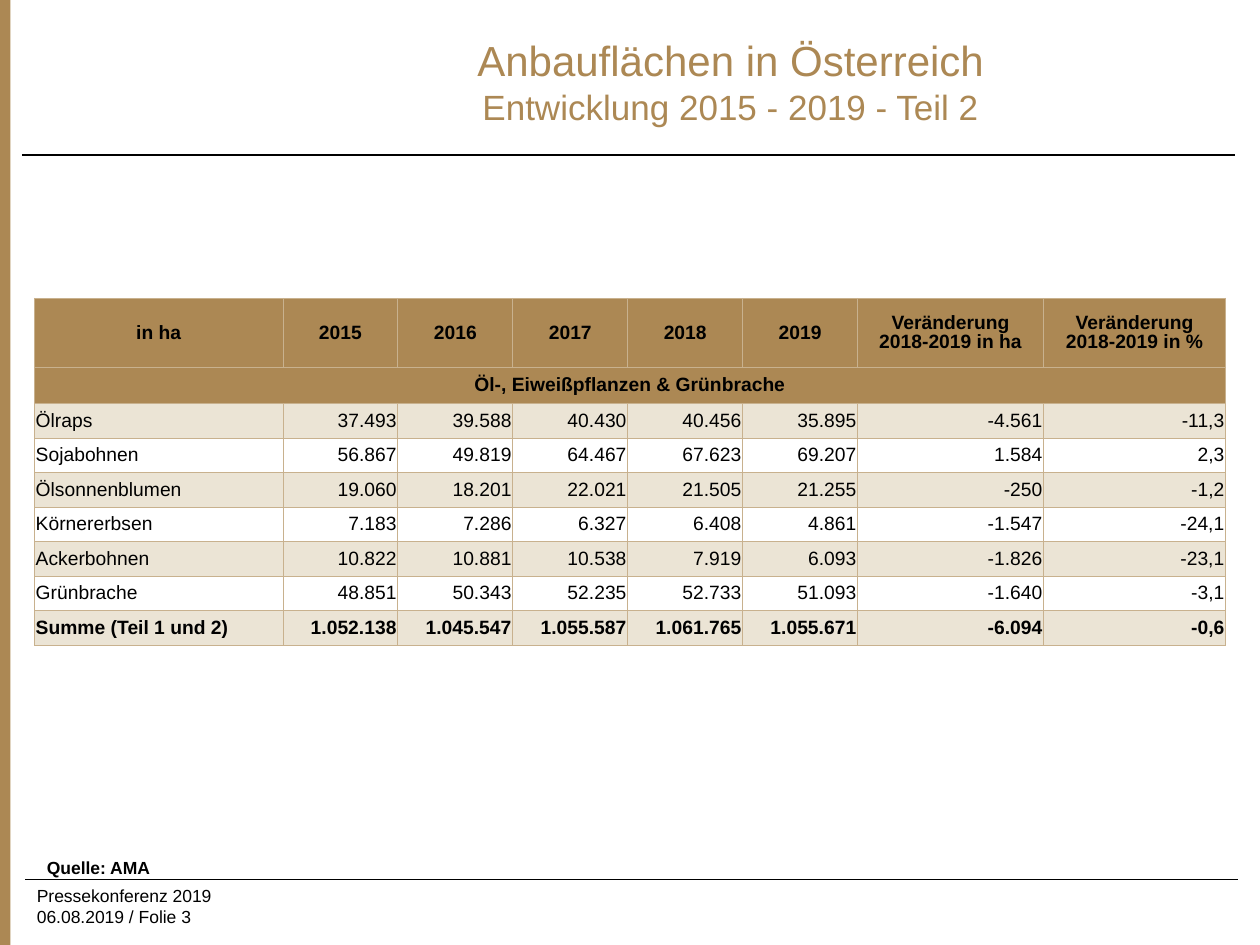
from typing import NamedTuple

from lxml import etree
from pptx import Presentation
from pptx.dml.color import RGBColor
from pptx.enum.shapes import MSO_CONNECTOR, MSO_SHAPE
from pptx.enum.text import MSO_ANCHOR, PP_ALIGN
from pptx.oxml.ns import qn
from pptx.util import Pt

RECT = MSO_SHAPE.RECTANGLE
STRAIGHT = MSO_CONNECTOR.STRAIGHT
MIDDLE = MSO_ANCHOR.MIDDLE
LEFT, CENTER, RIGHT = PP_ALIGN.LEFT, PP_ALIGN.CENTER, PP_ALIGN.RIGHT

FONT = "Arial"
COLORS = {"gold": "AC8854", "sand": "EBE4D5", "grid": "C8B18E", "ink": "000000"}


class Box(NamedTuple):
    left: float
    top: float
    width: float
    height: float


class Rule(NamedTuple):
    left: float
    right: float
    top: float


class Crop(NamedTuple):
    name: str
    areas: list[str]
    change: str
    percent: str
    bold: bool = False


RULES = [Rule(12.5, 705.5, 88.6), Rule(14.3, 707.5, 502.6)]
TABLE = Box(19.7, 170.4, 680.8, 198.5)
WIDTHS = [142] + [65.7] * 5 + [106.3, 104]
HEAD = ["in ha", *map(str, range(2015, 2020)),
        "Veränderung\n2018-2019 in ha", "Veränderung\n2018-2019 in %"]
GROUP = "Öl-, Eiweißpflanzen & Grünbrache"
CROPS = [
    Crop("Ölraps", ["37.493", "39.588", "40.430", "40.456", "35.895"], "-4.561", "-11,3"),
    Crop("Sojabohnen", ["56.867", "49.819", "64.467", "67.623", "69.207"], "1.584", "2,3"),
    Crop("Ölsonnenblumen", ["19.060", "18.201", "22.021", "21.505", "21.255"], "-250", "-1,2"),
    Crop("Körnererbsen", ["7.183", "7.286", "6.327", "6.408", "4.861"], "-1.547", "-24,1"),
    Crop("Ackerbohnen", ["10.822", "10.881", "10.538", "7.919", "6.093"], "-1.826", "-23,1"),
    Crop("Grünbrache", ["48.851", "50.343", "52.235", "52.733", "51.093"], "-1.640", "-3,1"),
    Crop("Summe (Teil 1 und 2)",
         ["1.052.138", "1.045.547", "1.055.587", "1.061.765", "1.055.671"],
         "-6.094", "-0,6", True),
]
HEIGHTS = [39.6, 20.7] + [19.74] * len(CROPS)


def tint(name: str) -> RGBColor:
    return RGBColor.from_string(COLORS[name])


def set_font(font, size: float, color: str = "ink", bold: bool = False) -> None:
    font.name = FONT
    font.size = Pt(size)
    font.bold = bold
    font.color.rgb = tint(color)


def add_bar(slide, box: Box) -> None:
    bar = slide.shapes.add_shape(RECT, *map(Pt, box))
    bar.shadow.inherit = False
    bar.fill.solid()
    bar.fill.fore_color.rgb = tint("gold")
    bar.line.fill.background()


def add_rule(slide, rule: Rule) -> None:
    line = slide.shapes.add_connector(
        STRAIGHT, Pt(rule.left), Pt(rule.top), Pt(rule.right), Pt(rule.top))
    line.line.color.rgb = tint("ink")
    line.line.width = Pt(0.75)
    etree.SubElement(line._element.spPr, qn("a:effectLst"))


def add_frame(slide, box: Box):
    frame = slide.shapes.add_textbox(*map(Pt, box)).text_frame
    frame.word_wrap = True
    return frame


def add_title(slide, box: Box) -> None:
    frame = add_frame(slide, box)
    frame.vertical_anchor = MIDDLE
    para = frame.paragraphs[0]
    para.alignment = CENTER
    first = para.add_run()
    first.text = "Anbauflächen in Österreich"
    set_font(first.font, 24, "gold")
    para.add_line_break()
    second = para.add_run()
    second.text = "Entwicklung 2015 - 2019 - Teil 2"
    set_font(second.font, 20, "gold")


def add_note(slide, box: Box, text: str, bold: bool = False) -> None:
    """Add small text; a vertical tab in it breaks the line."""
    para = add_frame(slide, box).paragraphs[0]
    para.text = text
    set_font(para.font, 10, bold=bold)


def add_grid(cell) -> None:
    """Draw thin borders on all four sides; call before the fill is set."""
    props = cell._tc.get_or_add_tcPr()
    for side in ("lnL", "lnR", "lnT", "lnB"):
        edge = etree.SubElement(props, qn(f"a:{side}"), w=str(Pt(0.5)))
        fill = etree.SubElement(edge, qn("a:solidFill"))
        etree.SubElement(fill, qn("a:srgbClr"), val=COLORS["grid"])


def fill_cell(cell, text: str, fill: str | None, align, bold: bool) -> None:
    add_grid(cell)
    if fill:
        cell.fill.solid()
        cell.fill.fore_color.rgb = tint(fill)
    else:
        cell.fill.background()
    cell.vertical_anchor = MIDDLE
    cell.margin_left = cell.margin_right = cell.margin_top = Pt(0.72)
    cell.margin_bottom = 0
    cell.text = text
    for para in cell.text_frame.paragraphs:
        para.alignment = align
        para.line_spacing = 0.9
        set_font(para.font, 11, bold=bold)


def add_table(slide, box: Box) -> None:
    table = slide.shapes.add_table(len(HEIGHTS), len(WIDTHS), *map(Pt, box)).table
    table.first_row = table.horz_banding = False
    for col, width in zip(table.columns, WIDTHS):
        col.width = Pt(width)
    for row, height in zip(table.rows, HEIGHTS):
        row.height = Pt(height)

    group = [GROUP] + [""] * (len(WIDTHS) - 1)
    for r, texts in enumerate([HEAD, group]):
        for c, text in enumerate(texts):
            fill_cell(table.cell(r, c), text, "gold", CENTER, True)
    table.cell(1, 0).merge(table.cell(1, len(WIDTHS) - 1))

    for i, crop in enumerate(CROPS):
        fill = None if i % 2 else "sand"
        texts = [crop.name, *crop.areas, crop.change, crop.percent]
        for c, text in enumerate(texts):
            fill_cell(table.cell(i + 2, c), text, fill, RIGHT if c else LEFT, crop.bold)


def main() -> None:
    deck = Presentation()
    deck.slide_width, deck.slide_height = Pt(720), Pt(540)
    slide = deck.slides.add_slide(deck.slide_layouts[6])
    add_bar(slide, Box(-0.5, 0, 6.5, 540))
    for rule in RULES:
        add_rule(slide, rule)
    add_note(slide, Box(14, 502, 238, 29), "Pressekonferenz 2019\v06.08.2019 / Folie 3")
    add_title(slide, Box(133, 9.5, 569, 73.5))
    add_note(slide, Box(19.7, 486, 680.8, 17.3), "Quelle: AMA", True)
    add_table(slide, TABLE)
    deck.save("out.pptx")


if __name__ == "__main__":
    main()
